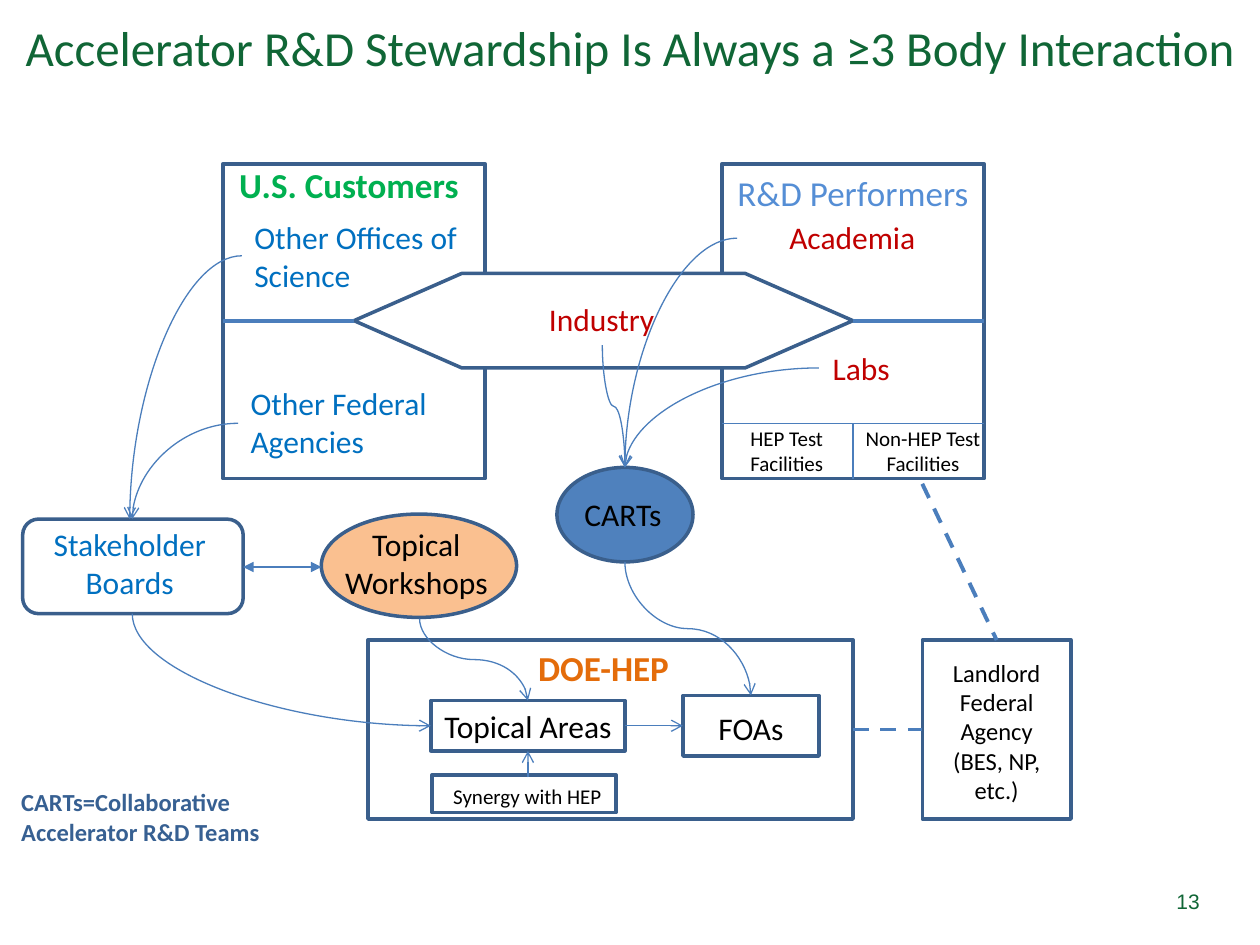
from lxml.etree import SubElement
from pptx import Presentation
from pptx.dml.color import RGBColor
from pptx.enum.dml import MSO_LINE
from pptx.enum.shapes import MSO_CONNECTOR as Connector, MSO_SHAPE as Shape
from pptx.enum.text import MSO_ANCHOR as Anchor, PP_ALIGN as Align
from pptx.oxml.ns import qn
from pptx.util import Inches, Pt

BORDER = "3A5F8C"
LINE = "4B7EBC"
GREEN = "106636"
BLUE = "0070C0"
RED = "C00000"
BLACK = "000000"


def color(value):
    return RGBColor.from_string(value)


def write(shape, text, size, text_color, align=Align.CENTER, bold=False,
          font="Calibri", anchor=Anchor.TOP):
    frame = shape.text_frame
    frame.word_wrap = True
    frame.vertical_anchor = anchor
    for index, line in enumerate(text.split("\n")):
        paragraph = frame.add_paragraph() if index else frame.paragraphs[0]
        paragraph.alignment = align
        run = paragraph.add_run()
        run.text = line
        run.font.size = Pt(size)
        run.font.name = font
        run.font.bold = bold
        run.font.color.rgb = color(text_color)


def add_label(slide, box, text, size, text_color, **style):
    shape = slide.shapes.add_textbox(*map(Inches, box))
    write(shape, text, size, text_color, **style)


def add_box(slide, box, kind=Shape.RECTANGLE, fill=None):
    shape = slide.shapes.add_shape(kind, *map(Inches, box))
    shape.shadow.inherit = False
    shape.line.color.rgb = color(BORDER)
    shape.line.width = Pt(2)
    if fill:
        shape.fill.solid()
        shape.fill.fore_color.rgb = color(fill)
    else:
        shape.fill.background()
    return shape


def add_line(slide, start, end, width=0.75, head=None, tail=None, dashed=False,
             kind=Connector.STRAIGHT):
    connector = slide.shapes.add_connector(kind, *map(Inches, (*start, *end)))
    connector.line.color.rgb = color(LINE)
    connector.line.width = Pt(width)
    if dashed:
        connector.line.dash_style = MSO_LINE.DASH
    outline = connector.line._get_or_add_ln()
    for tag, arrow in (("a:headEnd", head), ("a:tailEnd", tail)):
        if arrow:
            SubElement(outline, qn(tag), type=arrow)
    SubElement(connector._element.spPr, qn("a:effectLst"))
    return connector


def add_curve(slide, start, end, bends, downward=False):
    (left, top), (right, bottom) = start, end
    if downward:
        middle_x, middle_y = (left + right) / 2, (top + bottom) / 2
        half_x, half_y = (right - left) / 2, (bottom - top) / 2
        start = middle_x + half_y, middle_y - half_x
        end = middle_x - half_y, middle_y + half_x
    connector = add_line(slide, start, end, tail="arrow", kind=Connector.CURVE)
    properties = connector._element.spPr
    properties.find(qn("a:prstGeom")).set("prst", f"curvedConnector{bends}")
    if downward:
        properties.find(qn("a:xfrm")).set("rot", str(270 * 60000))


def add_parties(slide):
    for left in (1.77, 5.73):
        add_box(slide, (left, 1.3, 2.08, 2.5))
    hexagon = add_box(slide, (2.81, 2.17, 3.96, 0.75), Shape.HEXAGON, "FFFFFF")
    hexagon.adjustments[0] = 1.14
    for start, end in ((2.81, 1.77), (7.81, 6.77)):
        add_line(slide, (start, 2.55), (end, 2.55), 2.25)
    add_label(slide, (1.67, 1.25, 2.2, 0.44), "U.S. Customers", 20, "00B050", bold=True)
    add_label(slide, (5.73, 1.31, 2.08, 0.44), "R&D Performers", 20, "558ED5")
    for box, text in (
        ((1.92, 1.68, 1.83, 0.71), "Other Offices of Science"),
        ((1.89, 3, 1.83, 0.71), "Other Federal Agencies"),
    ):
        add_label(slide, box, text, 18, BLUE, align=Align.LEFT)
    for box, text in (
        ((3.72, 2.33, 2.11, 0.4), "Industry"),
        ((5.85, 1.68, 1.83, 0.4), "Academia"),
        ((6.5, 2.72, 0.67, 0.4), "Labs"),
    ):
        add_label(slide, box, text, 18, RED)
    add_line(slide, (5.73, 3.36), (7.81, 3.36))
    add_line(slide, (6.77, 3.36), (6.77, 3.8))
    add_label(slide, (5.83, 3.33, 0.83, 0.5), "HEP Test Facilities", 12, BLACK)
    add_label(slide, (6.75, 3.33, 1.15, 0.5), "Non-HEP Test Facilities", 12, BLACK)


def add_agencies(slide):
    add_box(slide, (2.92, 5.08, 3.85, 1.42))
    add_label(slide, (3.75, 5.08, 2.08, 0.44), "DOE-HEP", 20, "E46C0A", bold=True)
    add_box(slide, (7.32, 5.08, 1.18, 1.42))
    add_label(slide, (7.32, 5.17, 1.18, 1.28),
              "Landlord Federal Agency\n(BES, NP, etc.)", 14, BLACK)
    add_line(slide, (6.77, 5.79), (7.32, 5.79), 2.25, dashed=True)
    add_line(slide, (7.32, 3.84), (7.91, 5.08), 2.25, dashed=True)
    add_box(slide, (5.42, 5.52, 1.08, 0.48))
    add_label(slide, (5.5, 5.58, 0.92, 0.4), "FOAs", 18, BLACK)
    areas = add_box(slide, (3.42, 5.56, 1.54, 0.4))
    write(areas, "Topical Areas", 18, BLACK, anchor=Anchor.MIDDLE)
    add_box(slide, (3.43, 6.15, 1.46, 0.3))
    add_label(slide, (3.04, 6.17, 2.29, 0.3), "Synergy with HEP", 12, BLACK)


def add_forums(slide):
    add_box(slide, (4.42, 3.71, 1.08, 0.75), Shape.OVAL, "4F81BD")
    add_label(slide, (4.54, 3.88, 0.83, 0.4), "CARTs", 18, BLACK, align=Align.LEFT)
    add_box(slide, (0.18, 4.12, 1.75, 0.75), Shape.ROUNDED_RECTANGLE)
    add_label(slide, (0.26, 4.12, 1.54, 0.71), "Stakeholder Boards", 18, BLUE)
    add_box(slide, (2.55, 4.08, 1.55, 0.82), Shape.OVAL, "FAC090")
    add_label(slide, (2.64, 4.12, 1.33, 0.71), "Topical Workshops", 18, BLACK)
    add_label(slide, (0.07, 6.2, 2.13, 0.57), "CARTs=Collaborative Accelerator R&D Teams",
              14, "376092", align=Align.LEFT, bold=True)


def add_flows(slide):
    carts_top = (4.96, 3.71)
    for start, end in (
        ((5.85, 1.89), carts_top),
        ((6.5, 2.92), carts_top),
        ((1.92, 2.03), (1.03, 4.12)),
        ((1.89, 3.36), (1.05, 4.12)),
    ):
        add_curve(slide, start, end, 2)
    for start, end, bends in (
        ((4.78, 2.74), carts_top, 3),
        ((4.96, 4.46), (5.96, 5.52), 3),
        ((3.33, 4.91), (4.19, 5.56), 3),
        ((1.05, 4.87), (3.42, 5.76), 2),
    ):
        add_curve(slide, start, end, bends, downward=True)
    add_line(slide, (4.96, 5.76), (5.42, 5.76), tail="arrow")
    add_line(slide, (4.19, 6.17), (4.19, 5.96), tail="arrow")
    add_line(slide, (1.93, 4.5), (2.55, 4.5), head="triangle", tail="triangle")


def main():
    presentation = Presentation()
    presentation.slide_width = Inches(10)
    presentation.slide_height = Inches(7.5)
    slide = presentation.slides.add_slide(presentation.slide_layouts[6])
    add_label(slide, (0, 0, 10, 0.75),
              "Accelerator R&D Stewardship Is Always a ≥3 Body Interaction",
              28, GREEN, anchor=Anchor.MIDDLE)
    add_label(slide, (9.2, 6.95, 0.42, 0.4), "13", 12, GREEN,
              align=Align.RIGHT, font="Arial", anchor=Anchor.MIDDLE)
    add_parties(slide)
    add_agencies(slide)
    add_forums(slide)
    add_flows(slide)
    presentation.save("out.pptx")


if __name__ == "__main__":
    main()
